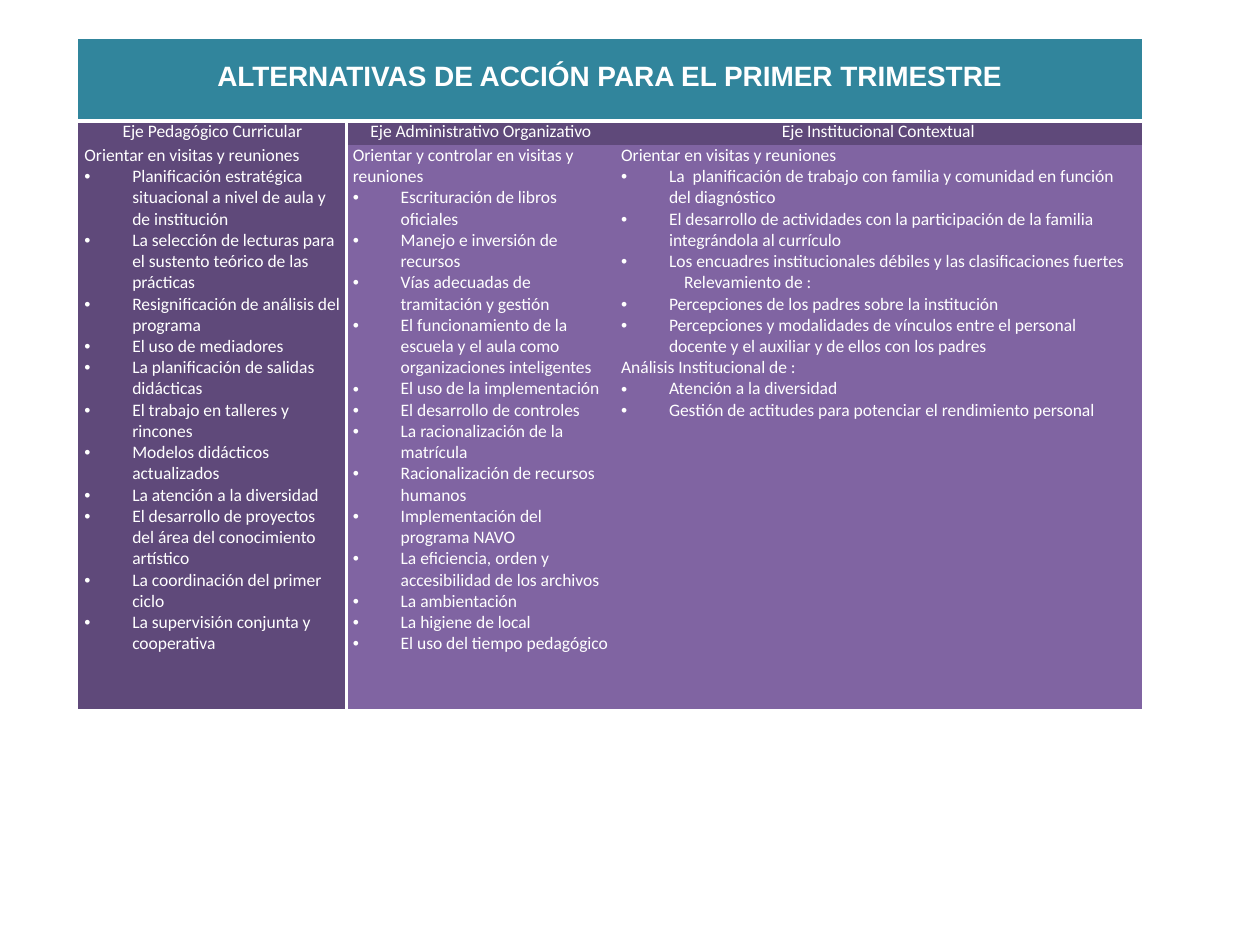
"""Build the slide with the table of first-term action alternatives by axis."""
from lxml.etree import SubElement
from pptx import Presentation
from pptx.dml.color import RGBColor
from pptx.enum.text import PP_ALIGN
from pptx.oxml.ns import qn
from pptx.util import Inches, Pt

COLORS = {"title": "31859C", "dark": "5F497A", "light": "8064A2", "white": "FFFFFF"}
NO_STYLE = "{2D5ABB26-0587-4C30-8999-92F81FD0307C}"
COLUMNS = [2.13, 2.13, 4.18]
ROWS = [0.65, 0.19, 4.48]
INDENTS = {"lead": (0, 0), "bullet": (0.38, -0.38), "inset": (0.5, 0)}

TITLE = "ALTERNATIVAS DE ACCIÓN PARA EL PRIMER TRIMESTRE"
AXES = [
    ("Eje Pedagógico Curricular", "dark", [
        ("lead", "Orientar en visitas y reuniones"),
        ("bullet", "Planificación estratégica situacional a nivel de aula y de institución"),
        ("bullet", "La selección de lecturas para el sustento teórico de las prácticas"),
        ("bullet", "Resignificación de análisis del programa"),
        ("bullet", "El uso de mediadores"),
        ("bullet", "La planificación de salidas didácticas"),
        ("bullet", "El trabajo en talleres y rincones"),
        ("bullet", "Modelos didácticos actualizados"),
        ("bullet", "La atención a la diversidad"),
        ("bullet", "El desarrollo de proyectos del área del conocimiento artístico"),
        ("bullet", "La coordinación del primer ciclo"),
        ("bullet", "La supervisión conjunta y cooperativa"),
    ]),
    ("Eje Administrativo Organizativo", "light", [
        ("lead", "Orientar y controlar en visitas y reuniones"),
        ("bullet", "Escrituración de libros oficiales"),
        ("bullet", "Manejo e inversión de recursos"),
        ("bullet", "Vías adecuadas de tramitación y gestión"),
        ("bullet", "El funcionamiento de la escuela y el aula como organizaciones inteligentes"),
        ("bullet", "El uso de la implementación"),
        ("bullet", "El desarrollo de controles"),
        ("bullet", "La racionalización de la matrícula"),
        ("bullet", "Racionalización de recursos humanos"),
        ("bullet", "Implementación del programa NAVO"),
        ("bullet", "La eficiencia, orden y accesibilidad de los archivos"),
        ("bullet", "La ambientación"),
        ("bullet", "La higiene de local"),
        ("bullet", "El uso del tiempo pedagógico"),
    ]),
    ("Eje Institucional Contextual", "light", [
        ("lead", "Orientar en visitas y reuniones"),
        ("bullet", "La  planificación de trabajo con familia y comunidad en función del diagnóstico"),
        ("bullet", "El desarrollo de actividades con la participación de la familia integrándola al currículo"),
        ("bullet", "Los encuadres institucionales débiles y las clasificaciones fuertes"),
        ("inset", "Relevamiento de :"),
        ("bullet", "Percepciones de los padres sobre la institución"),
        ("bullet", "Percepciones y modalidades de vínculos entre el personal docente y el auxiliar y de ellos con los padres"),
        ("lead", "Análisis Institucional de :"),
        ("bullet", "Atención a la diversidad"),
        ("bullet", "Gestión de actitudes para potenciar el rendimiento personal"),
    ]),
]


def format_cell(cell, color, ruled_edges, top=0):
    cell.margin_left = cell.margin_right = Inches(0.05)
    cell.margin_top, cell.margin_bottom = Inches(top), 0
    properties = cell._tc.get_or_add_tcPr()
    for edge in "LRTB":
        border = SubElement(properties, qn(f"a:ln{edge}"))
        if edge in ruled_edges:
            border.set("w", str(Pt(2.25)))
            line_fill = SubElement(border, qn("a:solidFill"))
            SubElement(line_fill, qn("a:srgbClr"), val=COLORS["white"])
        else:
            SubElement(border, qn("a:noFill"))
    cell.fill.solid()
    cell.fill.fore_color.rgb = RGBColor.from_string(COLORS[color])


def write(paragraph, wording, size=10, font="Calibri", bold=False, level=None):
    run = paragraph.add_run()
    run.text = wording
    run.font.size, run.font.name, run.font.bold = Pt(size), font, bold
    run.font.color.rgb = RGBColor.from_string(COLORS["white"])
    if level is None:
        paragraph.alignment = PP_ALIGN.CENTER
        return
    margin, hanging = INDENTS[level]
    layout = paragraph._p.get_or_add_pPr()
    layout.set("marL", str(Inches(margin)))
    layout.set("indent", str(Inches(hanging)))
    if level == "bullet":
        SubElement(layout, qn("a:buFont"), typeface="Arial")
        SubElement(layout, qn("a:buChar"), char="•")


prs = Presentation()
prs.slide_width, prs.slide_height = Inches(10), Inches(7.5)
slide = prs.slides.add_slide(prs.slide_layouts[6])
table = slide.shapes.add_table(
    len(ROWS), len(COLUMNS), Inches(0.62), Inches(0.31),
    Inches(sum(COLUMNS)), Inches(sum(ROWS))).table
table.first_row = table.horz_banding = False
table._tbl.tblPr.find(qn("a:tableStyleId")).text = NO_STYLE
for column, width in zip(table.columns, COLUMNS):
    column.width = Inches(width)
for row, height in zip(table.rows, ROWS):
    row.height = Inches(height)

table.cell(0, 0).merge(table.cell(0, 2))
for heading_cell in table.rows[0].cells:
    format_cell(heading_cell, "title", "B", top=0.18)
write(table.cell(0, 0).text_frame.paragraphs[0], TITLE, 16, "Arial", True)

for index, (axis, color, actions) in enumerate(AXES):
    divider = ["R", "L", ""][index]
    axis_cell, actions_cell = table.cell(1, index), table.cell(2, index)
    format_cell(axis_cell, "dark", divider + "T")
    format_cell(actions_cell, color, divider)
    write(axis_cell.text_frame.paragraphs[0], axis)
    frame = actions_cell.text_frame
    for position, (level, action) in enumerate(actions):
        paragraph = frame.add_paragraph() if position else frame.paragraphs[0]
        write(paragraph, action, level=level)

prs.save("out.pptx")
